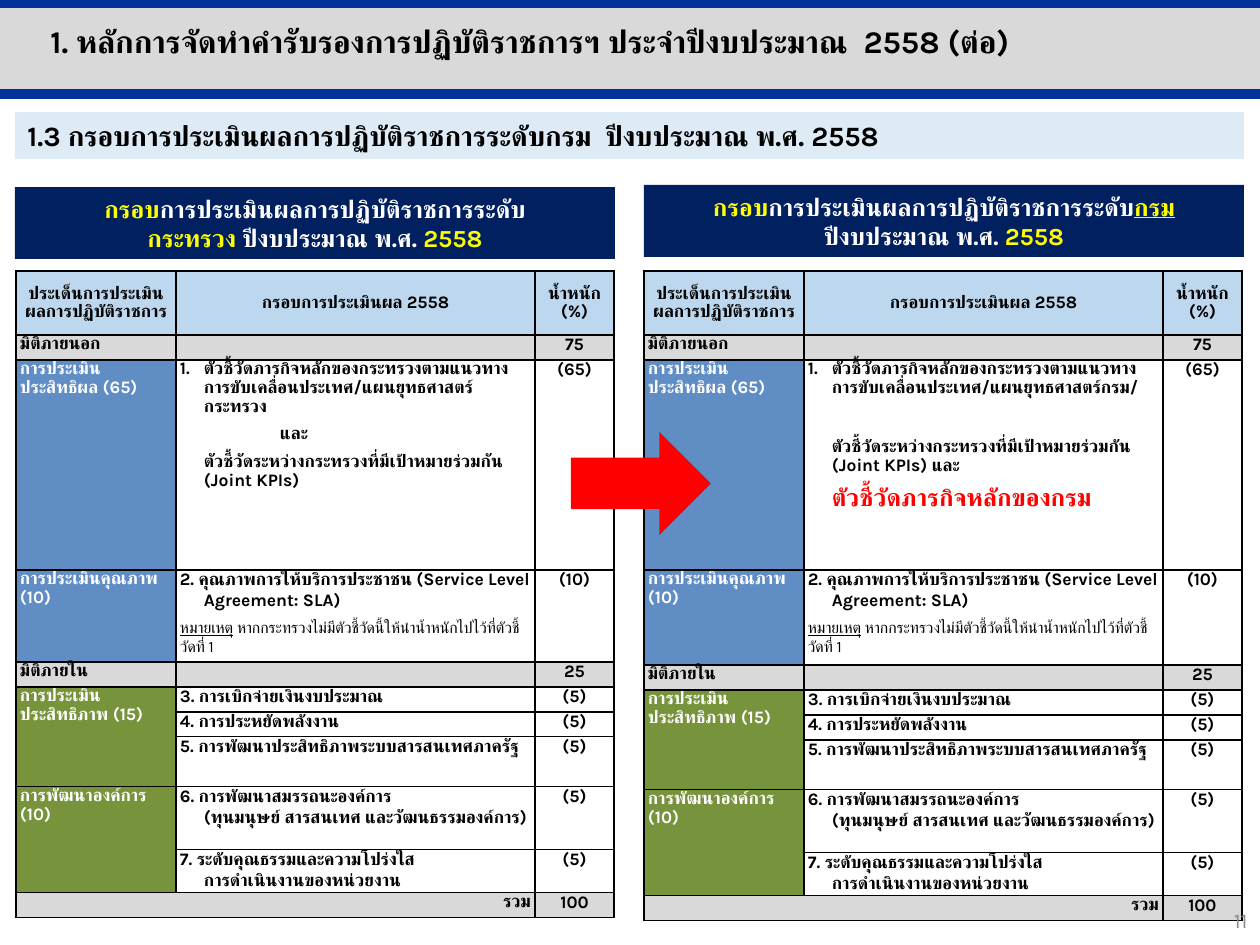
from lxml import etree
from pptx import Presentation
from pptx import util as u
from pptx.dml.color import RGBColor
from pptx.enum import shapes, text
from pptx.oxml import ns

PX = 914400 / 126
THEME = {
    "font": "Karla", "tight": 0.92,
    "title": 18, "section": 16, "heading": 14, "page": 12, "body": 10, "remark": 9,
    "black": "000000", "white": "FFFFFF", "yellow": "FFFF00", "red": "FF0000",
    "grey": "D9D9D9", "page_grey": "8C8C8C", "line": "003399", "navy": "002060",
    "pale": "DEEBF7", "header": "BDD7EE", "blue": "608DC4", "green": "77933C",
}
LEFT, CENTER, RIGHT = text.PP_ALIGN.LEFT, text.PP_ALIGN.CENTER, text.PP_ALIGN.RIGHT


def px(length):
    return u.Emu(round(length * PX))


def write(frame, paragraphs, size="body", color="black", bold=True, align=LEFT, tight=False):
    """Each paragraph is a string or a dict; runs are (text, colour, underline)."""
    frame.word_wrap = True
    for index, item in enumerate(paragraphs):
        item = {"runs": [(item,)]} if isinstance(item, str) else item
        paragraph = frame.paragraphs[0] if index == 0 else frame.add_paragraph()
        paragraph.alignment = align
        if tight:
            paragraph.line_spacing = THEME["tight"]
        if index and "before" in item:
            paragraph.space_before = u.Pt(item["before"])
        properties = paragraph._p.get_or_add_pPr()
        if "left" in item:
            properties.set("marL", str(px(item["left"])))
            properties.set("indent", str(px(item.get("indent", 0))))
        if item.get("numbered"):
            etree.SubElement(properties, ns.qn("a:buFont"), typeface=THEME["font"])
            etree.SubElement(properties, ns.qn("a:buAutoNum"), type="arabicPeriod")
        font = paragraph.font
        font.name = THEME["font"]
        font.size = u.Pt(THEME[item.get("size", size)])
        font.bold = item.get("bold", bold)
        font.color.rgb = RGBColor.from_string(THEME[item.get("color", color)])
        etree.SubElement(font._rPr, ns.qn("a:cs"), typeface=THEME["font"])
        for words, *style in item["runs"]:
            for part, line in enumerate(words.split("\n")):
                if part:
                    paragraph.add_line_break()
                if not line:
                    continue
                run = paragraph.add_run()
                run.text = line
                if style:
                    run.font.color.rgb = RGBColor.from_string(THEME[style[0]])
                    run.font.underline = len(style) > 1


presentation = Presentation()
presentation.slide_width, presentation.slide_height = px(1260), px(945)
slide = presentation.slides.add_slide(presentation.slide_layouts[6])

# Filled shapes
blocks = []
for kind, box, fill in [
    ("RECTANGLE", (0, 6, 1260, 86), "grey"),
    ("RECTANGLE", (15, 112, 1229, 47), "pale"),
    ("RECTANGLE", (15, 187, 600, 72), "navy"),
    ("RECTANGLE", (644, 185, 600, 72), "navy"),
    ("RIGHT_ARROW", (571, 432, 140, 103), "red"),
]:
    shape = slide.shapes.add_shape(shapes.MSO_SHAPE[kind], *map(px, box))
    shape.shadow.inherit = False
    shape.fill.solid()
    shape.fill.fore_color.rgb = RGBColor.from_string(THEME[fill])
    shape.line.fill.background()
    blocks.append(shape)
title_band, section_bar, ministry_heading, department_heading, arrow = blocks

write(section_bar.text_frame,
      ["1.3 กรอบการประเมินผลการปฏิบัติราชการระดับกรม  ปีงบประมาณ พ.ศ. 2558"], "section")
write(ministry_heading.text_frame, [{"runs": [
    ("กรอบ", "yellow"), ("การประเมินผลการปฏิบัติราชการระดับ\n", "white"),
    ("กระทรวง ", "yellow"), ("ปีงบประมาณ พ.ศ. ", "white"), ("2558", "yellow")]}],
    "heading", "white", align=CENTER)
write(department_heading.text_frame, [{"runs": [
    ("กรอบ", "yellow"), ("การประเมินผลการปฏิบัติราชการระดับ", "white"),
    ("กรม", "yellow", True), ("ปีงบประมาณ พ.ศ. ", "white"), ("2558", "yellow")]}],
    "heading", "white", align=CENTER)

# Lines above and below the title band
for y in (3, 94):
    line = slide.shapes.add_connector(shapes.MSO_CONNECTOR.STRAIGHT, 0, px(y), px(1260), px(y))
    line.line.color.rgb = RGBColor.from_string(THEME["line"])
    line.line.width = u.Pt(6)
    etree.SubElement(line._element.spPr, ns.qn("a:effectLst"))

# Indicator paragraphs; the first list differs between the two tables
HANG = {"left": 24, "indent": -24}
ministry_kpis = [
    {"runs": [("ตัวชี้วัดภารกิจหลักของกระทรวงตามแนวทางการขับเคลื่อนประเทศ/แผนยุทธศาสตร์กระทรวง",)],
     "numbered": True, **HANG},
    {"runs": [("และ",)], "left": 100, "before": 5},
    {"runs": [("ตัวชี้วัดระหว่างกระทรวงที่มีเป้าหมายร่วมกัน (Joint KPIs)",)], "left": 24, "before": 5},
]
department_kpis = [
    {"runs": [("ตัวชี้วัดภารกิจหลักของกระทรวงตามแนวทางการขับเคลื่อนประเทศ/แผนยุทธศาสตร์กรม/",)],
     "numbered": True, **HANG},
    {"runs": [("ตัวชี้วัดระหว่างกระทรวงที่มีเป้าหมายร่วมกัน (Joint KPIs) และ",)],
     "left": 24, "before": 23},
    {"runs": [("ตัวชี้วัดภารกิจหลักของกรม",)], "left": 24, "before": 6,
     "size": "heading", "color": "red"},
]
service_quality = [
    {"runs": [("2. คุณภาพการให้บริการประชาชน (Service Level Agreement: SLA)",)], **HANG},
    {"runs": [("หมายเหตุ", "black", True),
              (" หากกระทรวงไม่มีตัวชี้วัดนี้ให้นำน้ำหนักไปไว้ที่ตัวชี้วัดที่ 1", "black")],
     "before": 5, "size": "remark", "bold": False},
]

# Evaluation tables: row height, fills of the first and other cells, three cells
for left, kpis, quality_height in [(16, ministry_kpis, 92), (644, department_kpis, 95)]:
    rows = [
        (64, "header", "header", ["ประเด็นการประเมินผลการปฏิบัติราชการ"],
         ["กรอบการประเมินผล 2558"], ["น้ำหนัก", "(%)"]),
        (25, "grey", "grey", ["มิติภายนอก"], [], ["75"]),
        (210, "blue", "white", ["การประเมินประสิทธิผล (65)"], kpis, ["(65)"]),
        (quality_height, "blue", "white", ["การประเมินคุณภาพ (10)"], service_quality, ["(10)"]),
        (25, "grey", "grey", ["มิติภายใน"], [], ["25"]),
        (25, "green", "white", ["การประเมินประสิทธิภาพ (15)"],
         ["3. การเบิกจ่ายเงินงบประมาณ"], ["(5)"]),
        (25, "green", "white", [], ["4. การประหยัดพลังงาน"], ["(5)"]),
        (50, "green", "white", [],
         [{"runs": [("5. การพัฒนาประสิทธิภาพระบบสารสนเทศภาครัฐ",)], **HANG}], ["(5)"]),
        (63, "green", "white", ["การพัฒนาองค์การ (10)"],
         [{"runs": [("6. การพัฒนาสมรรถนะองค์การ \n(ทุนมนุษย์ สารสนเทศ และวัฒนธรรมองค์การ)",)],
           **HANG}], ["(5)"]),
        (43, "green", "white", [],
         [{"runs": [("7. ระดับคุณธรรมและความโปร่งใส\nการดำเนินงานของหน่วยงาน",)], **HANG}], ["(5)"]),
        (25, "grey", "grey", ["รวม"], [], ["100"]),
    ]
    widths = (160, 359, 79)
    height = sum(row[0] for row in rows)
    table = slide.shapes.add_table(len(rows), 3, px(left), px(271), px(sum(widths)), px(height)).table
    table.first_row = table.horz_banding = False
    for column, width in zip(table.columns, widths):
        column.width = px(width)
    for r, (row_height, first_fill, other_fill, *contents) in enumerate(rows):
        table.rows[r].height = px(row_height)
        for c, content in enumerate(contents):
            cell = table.cell(r, c)
            cell.margin_left = px(4)
            cell.margin_right = px(10 if content is kpis else 4)
            cell.margin_top = cell.margin_bottom = 0
            for side in ("lnL", "lnR", "lnT", "lnB"):
                border = etree.SubElement(cell._tc.get_or_add_tcPr(), ns.qn("a:" + side), w="12700")
                solid = etree.SubElement(border, ns.qn("a:solidFill"))
                etree.SubElement(solid, ns.qn("a:srgbClr"), val=THEME["black"])
            cell.fill.solid()
            cell.fill.fore_color.rgb = RGBColor.from_string(THEME[other_fill if c else first_fill])
            if r == 0:
                cell.vertical_anchor = text.MSO_ANCHOR.MIDDLE
            if not content:
                etree.SubElement(cell.text_frame.paragraphs[0]._p, ns.qn("a:endParaRPr"),
                                 sz=str(THEME["body"] * 100))
                continue
            align = CENTER if r == 0 or c == 2 else RIGHT if r == len(rows) - 1 else LEFT
            color = "white" if c == 0 and first_fill in ("blue", "green") else "black"
            write(cell.text_frame, content, color=color, align=align,
                  tight=r == 0 or c == 0 or content is kpis)
    for first, last in [((5, 0), (7, 0)), ((8, 0), (9, 0)), ((10, 0), (10, 1))]:
        table.cell(*first).merge(table.cell(*last))

# Arrow lies over both tables
slide.shapes._spTree.append(arrow._element)

# Title and page number
for box, words, size, color, bold, align in [
    ((38, 16, 1200, 50), "1. หลักการจัดทำคำรับรองการปฏิบัติราชการฯ ประจำปีงบประมาณ  2558 (ต่อ)",
     "title", "black", True, LEFT),
    ((976, 895, 284, 50), "11", "page", "page_grey", False, RIGHT),
]:
    frame = slide.shapes.add_textbox(*map(px, box)).text_frame
    frame.vertical_anchor = text.MSO_ANCHOR.MIDDLE
    write(frame, [words], size, color, bold, align)

presentation.save("out.pptx")
